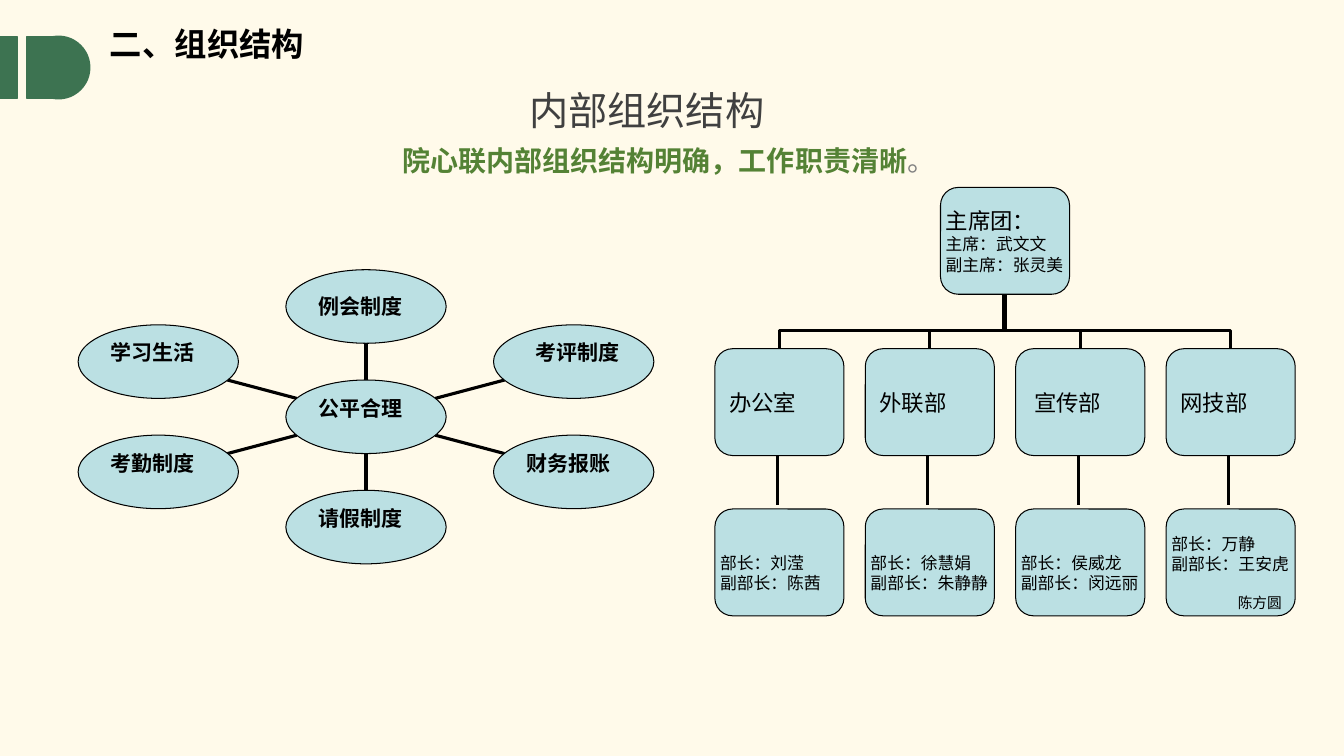
from lxml import etree
from pptx import Presentation
from pptx import util as u
from pptx.dml.color import RGBColor
from pptx.enum import shapes as sh, text as tx
from pptx.oxml.ns import qn

# Content
TITLE = "二、组织结构"
HEAD = "内部组织结构"
LEAD, STOP = "院心联内部组织结构明确，工作职责清晰", "。"
HUB = "公平合理"
# text, column and row from the hub, left inset, bottom inset
RULES = [
    ("学习生活", -1, -1, 0.09, 0.18),
    ("考勤制度", -1, 1, 0.09, 0.18),
    ("请假制度", 0, 2, 0.09, 0.18),
    ("财务报账", 1, 1, 0.09, 0.18),
    ("考评制度", 1, -1, 0.18, 0.18),
    ("例会制度", 0, -2, 0.09, 0),
]
CHAIRS = [("主席团：", 16), ("主席：武文文", 12), ("副主席：张灵美", 12)]
# name, left inset, people, foot of the branch line
UNITS = [
    ("办公室", 0.09, ["部长：刘滢", "副部长：陈茜"], 9.97),
    ("外联部", 0.09, ["部长：徐慧娟", "副部长：朱静静"], 9.97),
    ("宣传部", 0.13, ["部长：侯威龙", "副部长：闵远丽"], 9.97),
    ("网技部", 0.09, ["部长：万静", "副部长：王安虎"], 9.95),
]
EXTRA = "陈方圆"  # third person in the last unit

COL = dict(back="FFFAEA", green="3D7351", node="BBE0E3", ink="000000",
           head="404040", lead="548235", stop="808080")
SANS, BODY = "Noto Sans CJK SC", "Calibri"

# Grid
HX, HY, DX, DY = 3.63, 4.135, 2.06, 0.547  # hub centre and steps
OW, OH = 1.59, 0.73                        # oval
BX, STEP, BW, BH = 7.09, 1.492, 1.28, 1.06  # boxes
TOPS = (1.86, 3.46, 5.05)

prs = Presentation()
prs.slide_width, prs.slide_height = u.Inches(13.33), u.Inches(7.5)
slide = prs.slides.add_slide(prs.slide_layouts[5])
fill = slide.background.fill
fill.solid()
fill.fore_color.rgb = RGBColor.from_string(COL["back"])


def inch(*vals):
    return [u.Inches(v) for v in vals]


def write(par, words, size, font=BODY, color="ink", bold=False):
    run = par.add_run()
    run.text = words
    form = dict(size=u.Pt(size), name=font, bold=bold)
    for key, val in form.items():
        setattr(run.font, key, val)
    run.font.color.rgb = RGBColor.from_string(COL[color])
    east = etree.SubElement(run.font._element, qn("a:ea"))
    east.set("typeface", font)


def frame(shape, left=0, top=0, bottom=0, anchor=tx.MSO_ANCHOR.MIDDLE):
    body = shape.text_frame
    form = dict(word_wrap=True, auto_size=tx.MSO_AUTO_SIZE.NONE,
                vertical_anchor=anchor, margin_left=u.Inches(left),
                margin_top=u.Inches(top), margin_right=0,
                margin_bottom=u.Inches(bottom))
    for key, val in form.items():
        setattr(body, key, val)
    return body


def draw(kind, box, color, edge, width):
    shape = slide.shapes.add_shape(kind, *inch(*box))
    shape.shadow.inherit = False
    shape.fill.solid()
    shape.fill.fore_color.rgb = RGBColor.from_string(COL[color])
    shape.line.color.rgb = RGBColor.from_string(COL[edge])
    shape.line.width = u.Pt(width)
    return shape


def node(kind, box, lines, bold=False, **gaps):
    shape = draw(kind, box, "node", "ink", 0.75)
    body = frame(shape, **gaps)
    for i, (words, size) in enumerate(lines):
        par = body.add_paragraph() if i else body.paragraphs[0]
        par.alignment = tx.PP_ALIGN.LEFT
        write(par, words, size, bold=bold)
    return shape


def link(x1, y1, x2, y2, kind=sh.MSO_CONNECTOR.STRAIGHT):
    line = slide.shapes.add_connector(kind, *inch(x1, y1, x2, y2))
    line.line.width = u.Pt(2.25)
    line.line.color.rgb = RGBColor.from_string(COL["ink"])
    etree.SubElement(line._element.spPr, qn("a:effectLst"))
    return line


def branch(x1, y1, x2, y2):
    """Elbow that leaves and arrives upright, turning a third of the way."""
    mx, my, w, h = (x1 + x2) / 2, (y1 + y2) / 2, abs(x2 - x1), y1 - y2
    line = link(mx - h / 2, my - w / 2, mx + h / 2, my + w / 2,
                sh.MSO_CONNECTOR.ELBOW)
    prop = line._element.spPr
    spin = prop.find(qn("a:xfrm"))
    spin.set("rot", str((90 if x1 > x2 else 270) * 60000))
    if x1 > x2:
        spin.set("flipH", "1")
    geom = prop.find(qn("a:prstGeom"))
    adj = geom.find(qn("a:avLst"))
    if adj is None:
        adj = etree.SubElement(geom, qn("a:avLst"))
    etree.SubElement(adj, qn("a:gd"), name="adj1", fmla="val 33333")


# Title and green tab
RECT, OVAL = sh.MSO_SHAPE.RECTANGLE, sh.MSO_SHAPE.OVAL
for kind, x, w in [(RECT, 0, 0.17), (RECT, 0.27, 0.27), (OVAL, 0.27, 0.62)]:
    draw(kind, (x, 0.36, w, 0.62), "green", "green", 1)
title = slide.shapes.title
title.left, title.top, title.width, title.height = inch(0.99, 0.28, 8.62, 0.47)
par = frame(title, left=0.1, anchor=tx.MSO_ANCHOR.TOP).paragraphs[0]
par.alignment, par.line_spacing = tx.PP_ALIGN.LEFT, 0.9
write(par, TITLE, 23.1, SANS, bold=True)

# Heading and lead
box = slide.shapes.add_textbox(*inch(3.83, 0.76, 5.17, 1.01))
body = frame(box, anchor=tx.MSO_ANCHOR.TOP)
top, low = body.paragraphs[0], body.add_paragraph()
for par, side in [(top, tx.PP_ALIGN.CENTER), (low, tx.PP_ALIGN.RIGHT)]:
    par.alignment, par.line_spacing, par.space_before = side, 1.2, u.Pt(3)
write(top, HEAD, 28, SANS, "head")
write(low, LEAD, 20, SANS, "lead", True)
write(low, STOP, 20, SANS, "stop")

# Hub and spokes: each spoke is the middle third between two centres
for words, col, row, left, bottom in RULES + [(HUB, 0, 0, 0.09, 0.18)]:
    dx, dy = col * DX, row * DY
    if col or row:
        link(HX + dx / 3, HY + dy / 3, HX + dx * 2 / 3, HY + dy * 2 / 3)
    node(OVAL, (HX + dx - OW / 2, HY + dy - OH / 2, OW, OH),
         [(words, 15)], True, left=left, bottom=bottom)

# Chart of units: lines first, boxes above them
for i, (name, left, team, foot) in enumerate(UNITS):
    mid = BX + i * STEP + BW / 2
    branch(mid, TOPS[1], foot, TOPS[0] + BH)
    link(mid - 0.02, 5.01, mid - 0.02, 4.48)
ROUND = sh.MSO_SHAPE.ROUNDED_RECTANGLE
node(ROUND, (BX + 1.5 * STEP, TOPS[0], BW, BH), CHAIRS)
for i, (name, left, team, foot) in enumerate(UNITS):
    x = BX + i * STEP
    node(ROUND, (x, TOPS[1], BW, BH), [(name, 16)], left=left)
    staff = node(ROUND, (x, TOPS[2], BW, BH), [(t, 12) for t in team], top=0.2)

# Third person, set in from the left
par = staff.text_frame.add_paragraph()
par.space_before = u.Pt(14)
par._p.get_or_add_pPr().set("marL", str(u.Inches(0.66)))
write(par, EXTRA, 10.5)
par.alignment = tx.PP_ALIGN.LEFT

prs.save("out.pptx")
